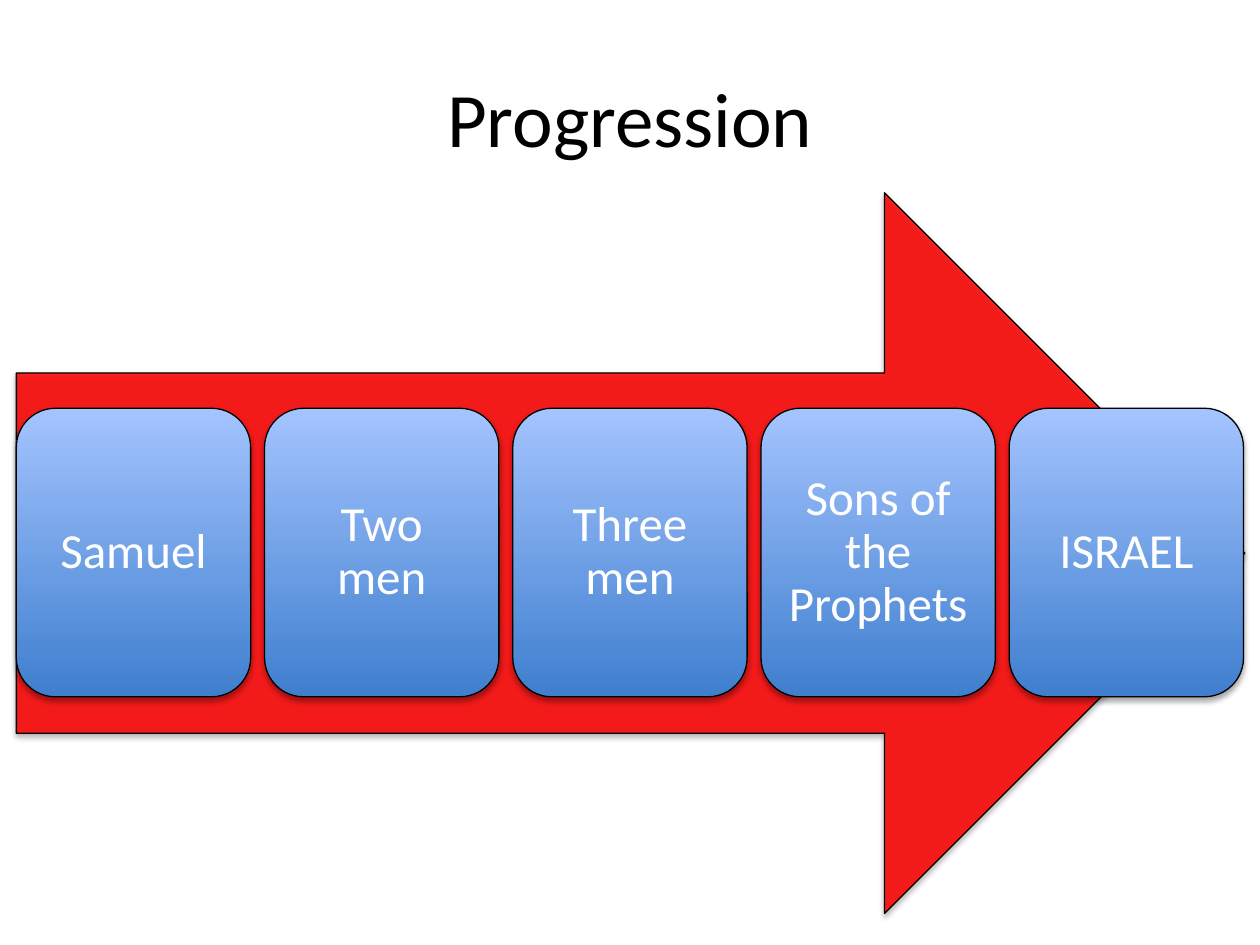
"""Build a slide that shows a progression of five steps along an arrow."""
import pptx
import pptx.dml.color
import pptx.enum.shapes
import pptx.enum.text
import pptx.oxml
import pptx.oxml.ns
import pptx.util

Inches = pptx.util.Inches
Pt = pptx.util.Pt
KIND = pptx.enum.shapes.MSO_SHAPE
HUES = {"black": "000000", "white": "FFFFFF", "red": "FF0000",
        "deep": "3F7FCE", "pale": "A4C4FF"}
STEPS = ["Samuel", "Two men", "Three men", "Sons of the Prophets", "ISRAEL"]
LEFT, PITCH = 0.13, 1.97
SHADE = (
    '<a:outerShdw %s blurRad="40000" dist="23000" dir="5400000" rotWithShape="0">'
    '<a:srgbClr val="%s"><a:alpha val="35000"/></a:srgbClr></a:outerShdw>'
)


def hue(name):
    return pptx.dml.color.RGBColor.from_string(HUES[name])


def write(shape, words, size, color, inset):
    frame = shape.text_frame
    frame.word_wrap = True
    frame.vertical_anchor = pptx.enum.text.MSO_ANCHOR.MIDDLE
    frame.margin_left = frame.margin_right = Inches(inset)
    frame.margin_top = frame.margin_bottom = Inches(inset)
    para = frame.paragraphs[0]
    para.alignment = pptx.enum.text.PP_ALIGN.CENTER
    run = para.add_run()
    run.text = words
    run.font.name = "Calibri"
    run.font.size = Pt(size)
    run.font.color.rgb = hue(color)
    return para


def add_solid(slide, kind, *box):
    shape = slide.shapes.add_shape(kind, *map(Inches, box))
    shape.line.color.rgb = hue("black")
    shape.line.width = Pt(0.75)
    shape.shadow.inherit = False
    glow = shape._element.spPr.find(pptx.oxml.ns.qn("a:effectLst"))
    space = pptx.oxml.ns.nsdecls("a")
    glow.append(pptx.oxml.parse_xml(SHADE % (space, HUES["black"])))
    return shape


def add_arrow(slide):
    arrow = add_solid(slide, KIND.RIGHT_ARROW, LEFT, 1.53, 9.75, 5.72)
    arrow.fill.solid()
    arrow.fill.fore_color.rgb = hue("red")
    tint = arrow._element.spPr.find(".//" + pptx.oxml.ns.qn("a:srgbClr"))
    alpha = '<a:alpha %s val="85000"/>' % pptx.oxml.ns.nsdecls("a")
    tint.append(pptx.oxml.parse_xml(alpha))


def add_step(slide, left, words):
    card = add_solid(slide, KIND.ROUNDED_RECTANGLE, left, 3.24, 1.86, 2.29)
    card.fill.gradient()
    card.fill.gradient_angle = 90
    for stop, place, name in zip(card.fill.gradient_stops, (0, 1), ("deep", "pale")):
        stop.position = place
        stop.color.rgb = hue(name)
    para = write(card, words, 28, "white", 0.12)
    para.line_spacing = 0.9


def add_title(slide, words):
    box = slide.shapes.add_textbox(*map(Inches, (0.5, 0.3, 9, 1.25)))
    write(box, words, 44, "black", 0.05)


def main():
    deck = pptx.Presentation()
    deck.slide_width, deck.slide_height = Inches(10), Inches(7.5)
    slide = deck.slides.add_slide(deck.slide_layouts[6])
    add_title(slide, "Progression")
    add_arrow(slide)
    for i, words in enumerate(STEPS):
        add_step(slide, LEFT + i * PITCH, words)
    deck.save("out.pptx")


if __name__ == "__main__":
    main()
